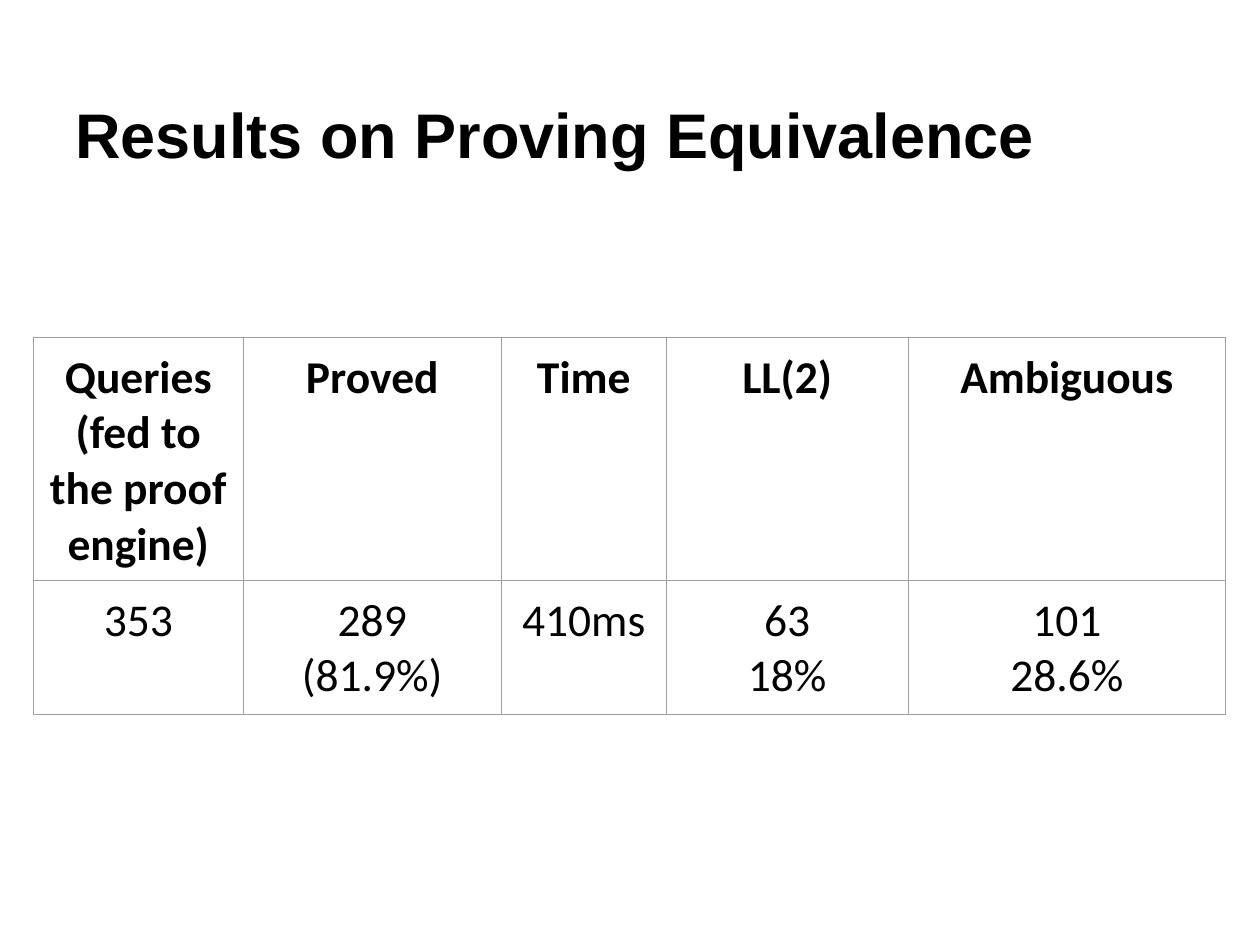
import pptx
import pptx.dml.color
import pptx.enum.text
import pptx.oxml
import pptx.oxml.ns
import pptx.util
from pptx.util import Cm, Pt

COLORS = {"text": "000000", "border": "9E9E9E"}
INSET = Cm(0.25)
COLUMN_WIDTHS = [4.22, 5.21, 3.32, 4.88, 6.4]
ROW_HEIGHTS = [2.6, 2.5]
RESULTS = [
    [["Queries", "(fed to the proof engine)"], ["Proved"], ["Time"], ["LL(2)"], ["Ambiguous"]],
    [["353"], ["289", "(81.9%)"], ["410ms"], ["63", "18%"], ["101", "28.6%"]],
]


def add_run(p, text, font, size, bold):
    r = p.add_run()
    r.text = text
    r.font.name = font
    r.font.size = Pt(size)
    r.font.bold = bold
    r.font.color.rgb = pptx.dml.color.RGBColor.from_string(COLORS["text"])


def add_title(slide, text, left, top, width, height):
    sp = slide.shapes.add_textbox(left, top, width, height)
    tf = sp.text_frame
    tf.word_wrap = True
    tf.vertical_anchor = pptx.enum.text.MSO_ANCHOR.BOTTOM
    tf.margin_left = tf.margin_right = tf.margin_top = tf.margin_bottom = INSET
    add_run(tf.paragraphs[0], text, "Arial", 36, True)


def set_borders(cell):
    tcPr = cell._tc.get_or_add_tcPr()
    for i, side in enumerate(("lnL", "lnR", "lnT", "lnB")):
        ln = pptx.oxml.parse_xml(
            f'<a:{side} {pptx.oxml.ns.nsdecls("a")} w="{Pt(0.75)}"><a:solidFill>'
            f'<a:srgbClr val="{COLORS["border"]}"/></a:solidFill></a:{side}>'
        )
        tcPr.insert(i, ln)


def fill_cell(cell, lines, bold):
    cell.margin_left = cell.margin_right = cell.margin_top = cell.margin_bottom = INSET
    cell.fill.background()
    set_borders(cell)
    tf = cell.text_frame
    for i, line in enumerate(lines):
        p = tf.add_paragraph() if i else tf.paragraphs[0]
        p.alignment = pptx.enum.text.PP_ALIGN.CENTER
        add_run(p, line, "Calibri", 26, bold)
        if line.startswith("(") and not bold:
            # The percentage hangs slightly left of the column centre
            p._p.get_or_add_pPr().set("indent", str(-Cm(0.44)))


def add_results_table(slide, rows, left, top, width, height):
    frame = slide.shapes.add_table(len(rows), len(rows[0]), left, top, width, height)
    table = frame.table
    table.first_row = table.horz_banding = False
    for column, share in zip(table.columns, COLUMN_WIDTHS):
        column.width = int(width * share / sum(COLUMN_WIDTHS))
    for row, row_height in zip(table.rows, ROW_HEIGHTS):
        row.height = Cm(row_height)
    for r, row in enumerate(rows):
        for c, lines in enumerate(row):
            fill_cell(table.cell(r, c), lines, bold=r == 0)
    frame.height = height


def main():
    prs = pptx.Presentation()
    prs.slide_width, prs.slide_height = Cm(25.4), Cm(19.05)
    slide = prs.slides.add_slide(prs.slide_layouts[6])
    add_title(slide, "Results on Proving Equivalence", Cm(1.27), Cm(0.76), Cm(22.86), Cm(2.95))
    add_results_table(slide, RESULTS, Cm(0.68), Cm(6.8), Cm(24.03), Cm(7.62))
    prs.save("out.pptx")


if __name__ == "__main__":
    main()
